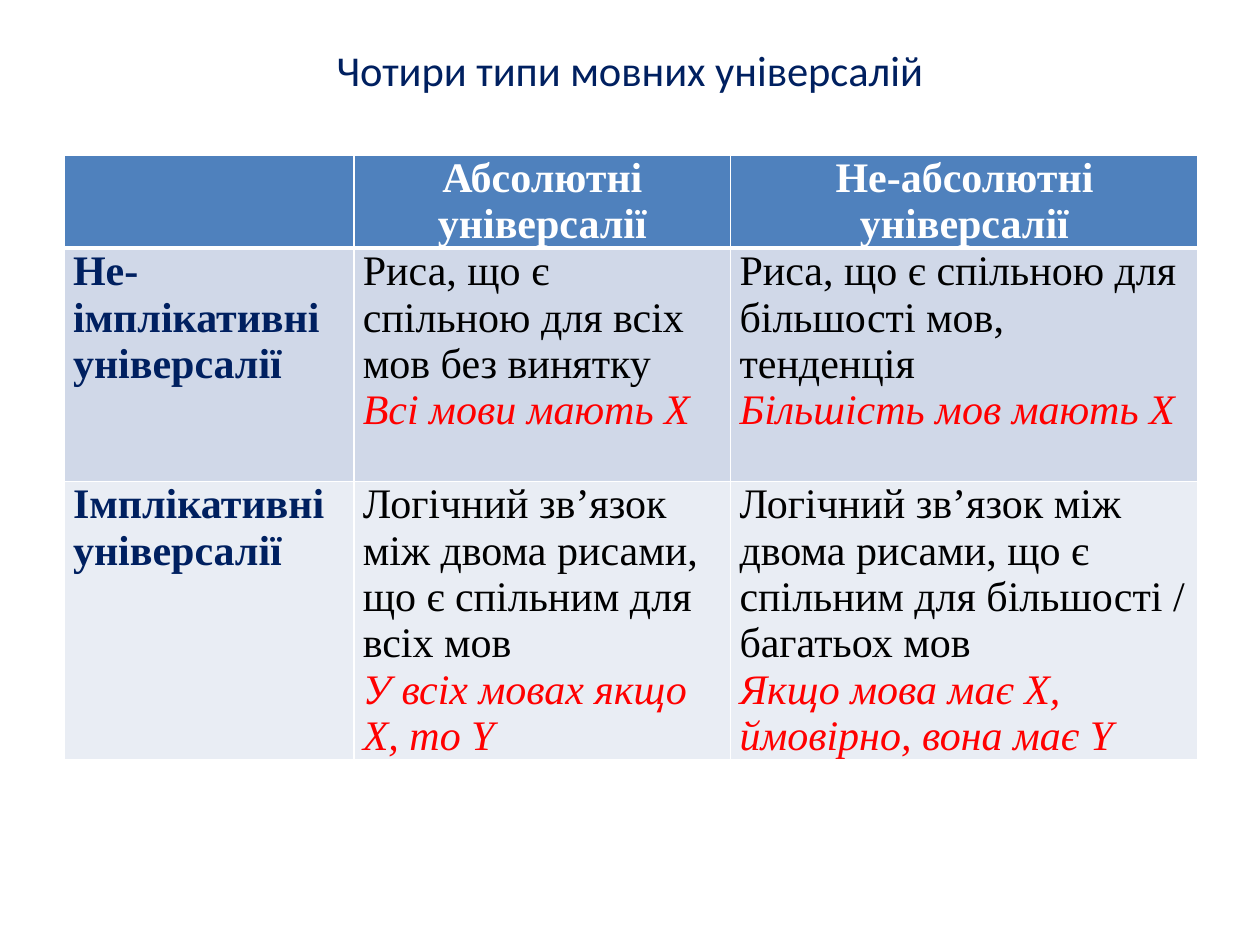
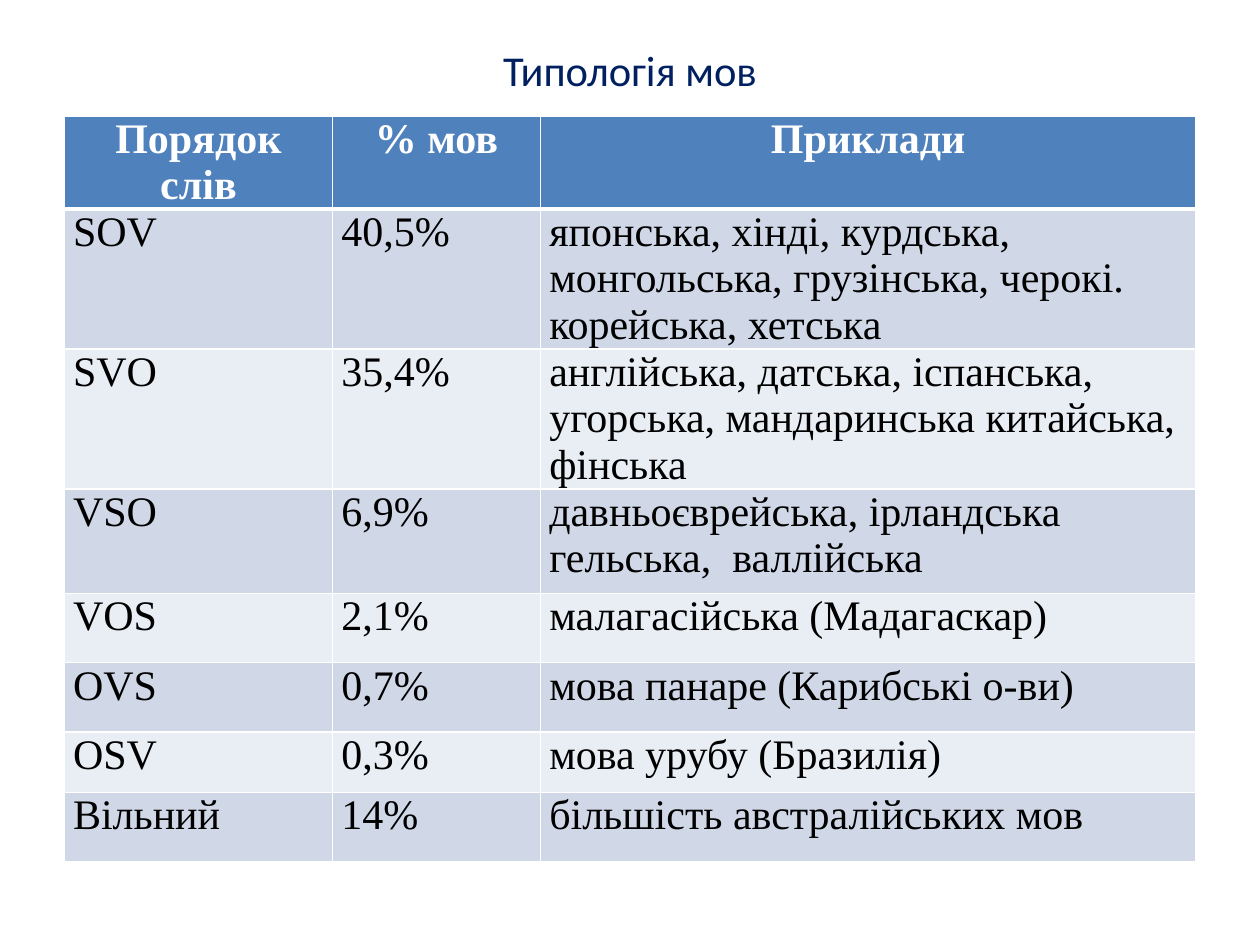
from lxml import etree
from pptx import Presentation
from pptx import util as u
from pptx.dml.color import RGBColor
from pptx.enum import text
from pptx.oxml.ns import qn

SLIDES = [
    {
        "title": "Чотири типи мовних універсалій",
        "top": 1.23,
        "columns": [2.3, 2.99, 3.71],
        "heights": [0.74, 1.85, 2.21],
        "row_heads": True,
        "rows": [
            [[], ["Абсолютні універсалії"], ["Не-абсолютні універсалії"]],
            [["Не-імплікативні універсалії"],
             ["Риса, що є спільною для всіх мов без винятку", "Всі мови мають Х"],
             ["Риса, що є спільною для більшості мов, тенденція", "Більшість мов мають Х"]],
            [["Імплікативні універсалії"],
             ["Логічний зв’язок між двома рисами, що є спільним для всіх мов",
              "У всіх мовах якщо Х, то Y"],
             ["Логічний зв’язок між двома рисами, що є спільним для більшості / багатьох мов",
              "Якщо мова має Х, ймовірно, вона має Y"]],
        ],
    },
    {
        "title": "Типологія мов",
        "top": 0.92,
        "columns": [2.13, 1.65, 5.2],
        "heights": [0.74, 1.11, 1.11, 0.83, 0.55, 0.55, 0.48, 0.55],
        "row_heads": False,
        "rows": [
            [["Порядок слів"], ["% мов"], ["Приклади"]],
            [["SOV"], ["40,5%"],
             ["японська, хінді, курдська, монгольська, грузінська, черокі. корейська, хетська"]],
            [["SVO"], ["35,4%"],
             ["англійська, датська, іспанська, угорська, мандаринська китайська, фінська"]],
            [["VSO"], ["6,9%"], ["давньоєврейська, ірландська гельська,  валлійська"]],
            [["VOS"], ["2,1%"], ["малагасійська (Мадагаскар)"]],
            [["OVS"], ["0,7%"], ["мова панаре (Карибські о-ви)"]],
            [["OSV"], ["0,3%"], ["мова урубу (Бразилія)"]],
            [["Вільний"], ["14%"], ["більшість австралійських мов"]],
        ],
    },
]

NAVY, WHITE = "002060", "FFFFFF"
HEADER_FILL = "4F81BD"
BANDS = ["D0D8E8", "E9EDF4"]
TABLE_LEFT = 0.51
TITLE_BOX = {"left": 0.5, "top": 0.3, "width": 9, "height": 0.69}
INSETS = {"margin_left": 0.07, "margin_top": 0, "margin_right": 0.07, "margin_bottom": 0}

TITLE = {"name": "Calibri", "size": u.Pt(24.3), "bold": False, "color": NAVY}
BODY = {"name": "Times New Roman", "size": u.Pt(24), "bold": False, "italic": False,
        "color": "000000"}
HEADER = {**BODY, "bold": True, "color": WHITE}
ROW_HEAD = {**BODY, "bold": True, "color": NAVY}
FORMULA = {**BODY, "italic": True, "color": "FF0000"}


def rgb(value):
    return RGBColor.from_string(value)


def set_inches(target, lengths):
    for key, value in lengths.items():
        setattr(target, key, u.Inches(value))


def set_font(font, style):
    for key, value in style.items():
        if key == "color":
            font.color.rgb = rgb(value)
        else:
            setattr(font, key, value)


def add_borders(cell, widths):
    properties = cell._tc.get_or_add_tcPr()
    for side, width in widths.items():
        line = etree.SubElement(properties, qn(f"a:ln{side}"), w=str(u.Pt(width)))
        fill = etree.SubElement(line, qn("a:solidFill"))
        etree.SubElement(fill, qn("a:srgbClr"), val=WHITE)


def fill_cell(cell, lines, row, is_row_head):
    set_inches(cell, INSETS)
    add_borders(cell, {"L": 1, "R": 1, "T": 3 if row == 1 else 1, "B": 3 if row == 0 else 1})
    cell.fill.solid()
    cell.fill.fore_color.rgb = rgb(BANDS[(row - 1) % 2] if row else HEADER_FILL)
    if not lines:
        return
    first_style = HEADER if row == 0 else ROW_HEAD if is_row_head else BODY
    cell.text_frame.text = "\n".join(lines)
    for paragraph, style in zip(cell.text_frame.paragraphs, [first_style, FORMULA]):
        paragraph.alignment = text.PP_ALIGN.LEFT if row else text.PP_ALIGN.CENTER
        set_font(paragraph.runs[0].font, style)


def add_title(slide, wording):
    title = slide.shapes.title
    set_inches(title, TITLE_BOX)
    title.text_frame.text = wording
    title.text_frame.vertical_anchor = text.MSO_ANCHOR.TOP
    paragraph = title.text_frame.paragraphs[0]
    paragraph.alignment = text.PP_ALIGN.CENTER
    set_font(paragraph.runs[0].font, TITLE)


def add_grid(slide, content):
    rows, columns, heights = (content[key] for key in ("rows", "columns", "heights"))
    box = [u.Inches(v) for v in (TABLE_LEFT, content["top"], sum(columns), sum(heights))]
    table = slide.shapes.add_table(len(rows), len(columns), *box).table
    for column, width in zip(table.columns, columns):
        column.width = u.Inches(width)
    for r, (row, height) in enumerate(zip(rows, heights)):
        table.rows[r].height = u.Inches(height)
        for c, lines in enumerate(row):
            fill_cell(table.cell(r, c), lines, r, content["row_heads"] and c == 0)


def main():
    deck = Presentation()
    deck.slide_width, deck.slide_height = u.Inches(10), u.Inches(7.5)
    for content in SLIDES:
        slide = deck.slides.add_slide(deck.slide_layouts[5])
        add_title(slide, content["title"])
        add_grid(slide, content)
    deck.save("out.pptx")


if __name__ == "__main__":
    main()
